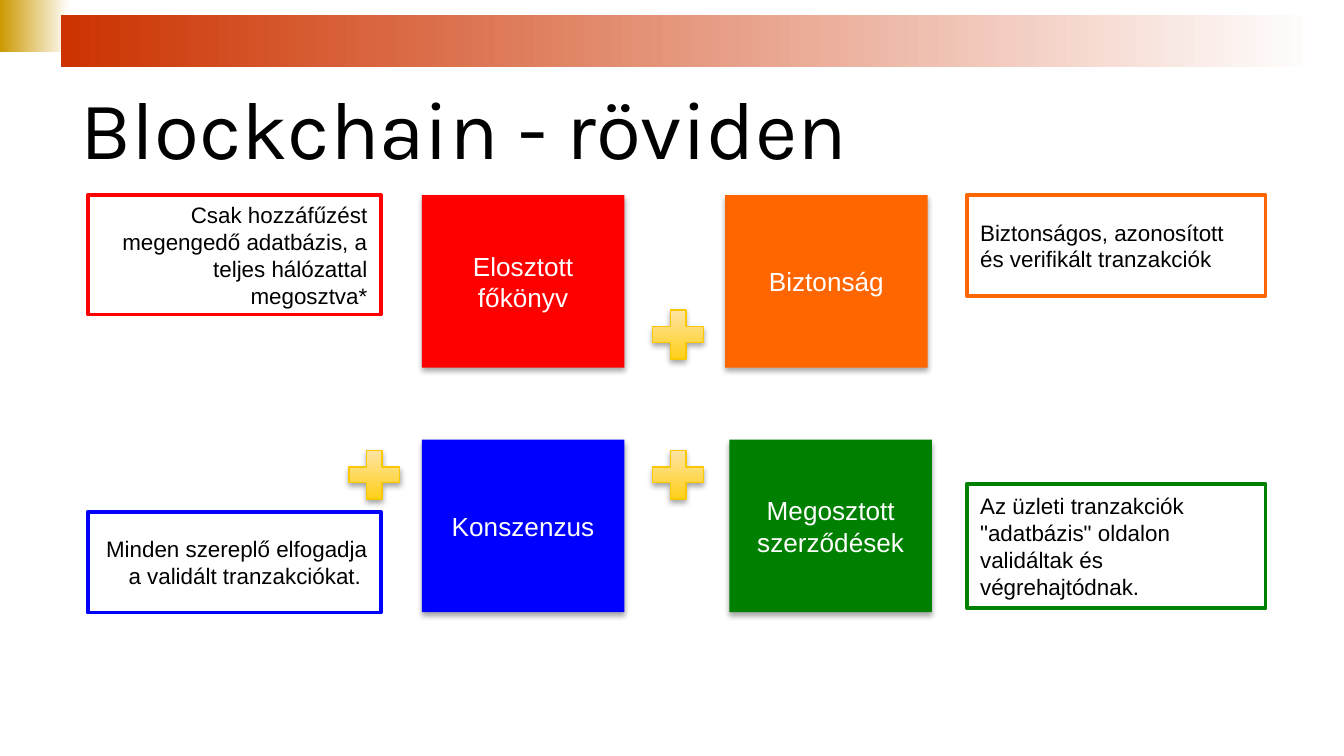
import pptx
import pptx.dml.color
import pptx.enum.shapes
import pptx.enum.text
import pptx.oxml
import pptx.oxml.ns
import pptx.util

Pt = pptx.util.Pt
SHAPES = pptx.enum.shapes.MSO_SHAPE
ALIGN = pptx.enum.text.PP_ALIGN

THEME = {
    "title_font": "Karla", "body_font": "Arial",
    "title_size": 44, "tile_size": 14, "note_size": 12,
    "text": "000000", "tile_text": "FFFFFF",
    "red": "FF0000", "orange": "FF6600", "blue": "0000FF", "green": "008000",
    "gold": "CC9900", "rust": "CC3300", "fade": "FFFFFF",
    "plus_low": "FFCC00", "plus_high": "FFE7BD", "plus_line": "F9C800",
}

TITLE = "Blockchain - röviden"
# start colour, (left, top, width, height)
BANDS = [("gold", (0, 0, 37.4, 28)), ("rust", (32.6, 8, 675.5, 28))]
# text, colour, left, top
TILE_SIZE = (108.5, 92.5)
UPPER, LOWER = 104.5, 235.5
TILES = [
    ("Megosztott szerződések", "green", 390.8, LOWER),
    ("Biztonság", "orange", 388.5, UPPER),
    ("Elosztott főkönyv", "red", 226, UPPER),
    ("Konszenzus", "blue", 226, LOWER),
]
PLUS_SIZE = (37, 35.5)
PLUSES = [(344.8, 161.5), (344.8, 236.6), (182, 236.6)]
# text, colour, alignment, (left, top, width, height)
NOTES = [
    ("Biztonságos, azonosított és verifikált tranzakciók", "orange",
     ALIGN.LEFT, (518, 104.5, 160, 54)),
    ('Az üzleti tranzakciók "adatbázis" oldalon validáltak és végrehajtódnak.',
     "green", ALIGN.LEFT, (518, 259.2, 160, 66.7)),
    ("Minden szereplő elfogadja a validált tranzakciókat. ", "blue",
     ALIGN.RIGHT, (47, 274.2, 157, 54)),
    ("Csak hozzáfűzést megengedő adatbázis, a teljes hálózattal megosztva*",
     "red", ALIGN.RIGHT, (47, 104.5, 157, 64)),
]


def color(name):
    return pptx.dml.color.RGBColor.from_string(THEME[name])


def write(shape, text, *, size, font="body_font", ink="text",
          align=ALIGN.LEFT, insets=(7.2, 3.6)):
    frame = shape.text_frame
    frame.word_wrap = True
    frame.vertical_anchor = pptx.enum.text.MSO_ANCHOR.MIDDLE
    frame.margin_left = frame.margin_right = Pt(insets[0])
    frame.margin_top = frame.margin_bottom = Pt(insets[1])
    paragraph = frame.paragraphs[0]
    paragraph.alignment = align
    run = paragraph.add_run()
    run.text = text
    run.font.name = THEME[font]
    run.font.size = Pt(THEME[size])
    run.font.color.rgb = color(ink)


def add_box(slide, box, *, kind=SHAPES.RECTANGLE, fill=None, angle=0,
            line=None, line_width=2, shadow=False):
    """Fill is None, one colour name, or a (start, end) gradient pair."""
    shape = slide.shapes.add_shape(kind, *map(Pt, box))
    if fill is None:
        shape.fill.background()
    elif isinstance(fill, tuple):
        shape.fill.gradient()
        shape.fill.gradient_angle = angle
        for stop, name in zip(shape.fill.gradient_stops, fill):
            stop.color.rgb = color(name)
    else:
        shape.fill.solid()
        shape.fill.fore_color.rgb = color(fill)
    if line:
        shape.line.color.rgb = color(line)
        shape.line.width = Pt(line_width)
    else:
        shape.line.fill.background()
    shape.shadow.inherit = False
    if shadow:
        add_shadow(shape)
    return shape


def add_shadow(shape):
    effects = shape._element.spPr.find(pptx.oxml.ns.qn("a:effectLst"))
    effects.append(pptx.oxml.parse_xml(
        f'<a:outerShdw {pptx.oxml.ns.nsdecls("a")} blurRad="{Pt(3.1)}" '
        f'dist="{Pt(1.8)}" dir="5400000" rotWithShape="0">'
        '<a:srgbClr val="000000"><a:alpha val="35000"/></a:srgbClr>'
        '</a:outerShdw>'))


def main():
    presentation = pptx.Presentation()
    presentation.slide_width, presentation.slide_height = Pt(720), Pt(405)
    slide = presentation.slides.add_slide(presentation.slide_layouts[6])

    for start, box in BANDS:
        add_box(slide, box, fill=(start, "fade"))
    title = slide.shapes.add_textbox(Pt(36), Pt(27.4), Pt(648), Pt(80.6))
    write(title, TITLE, size="title_size", font="title_font", insets=(7.2, 7.2))

    for text, fill, left, top in TILES:
        tile = add_box(slide, (left, top, *TILE_SIZE), fill=fill, shadow=True)
        write(tile, text, size="tile_size", ink="tile_text", align=ALIGN.CENTER)
    for position in PLUSES:
        add_box(slide, (*position, *PLUS_SIZE), kind=SHAPES.MATH_PLUS,
                fill=("plus_low", "plus_high"), angle=90,
                line="plus_line", line_width=0.75, shadow=True)
    for text, line, align, box in NOTES:
        note = add_box(slide, box, line=line)
        write(note, text, size="note_size", align=align)

    presentation.save("out.pptx")


if __name__ == "__main__":
    main()
